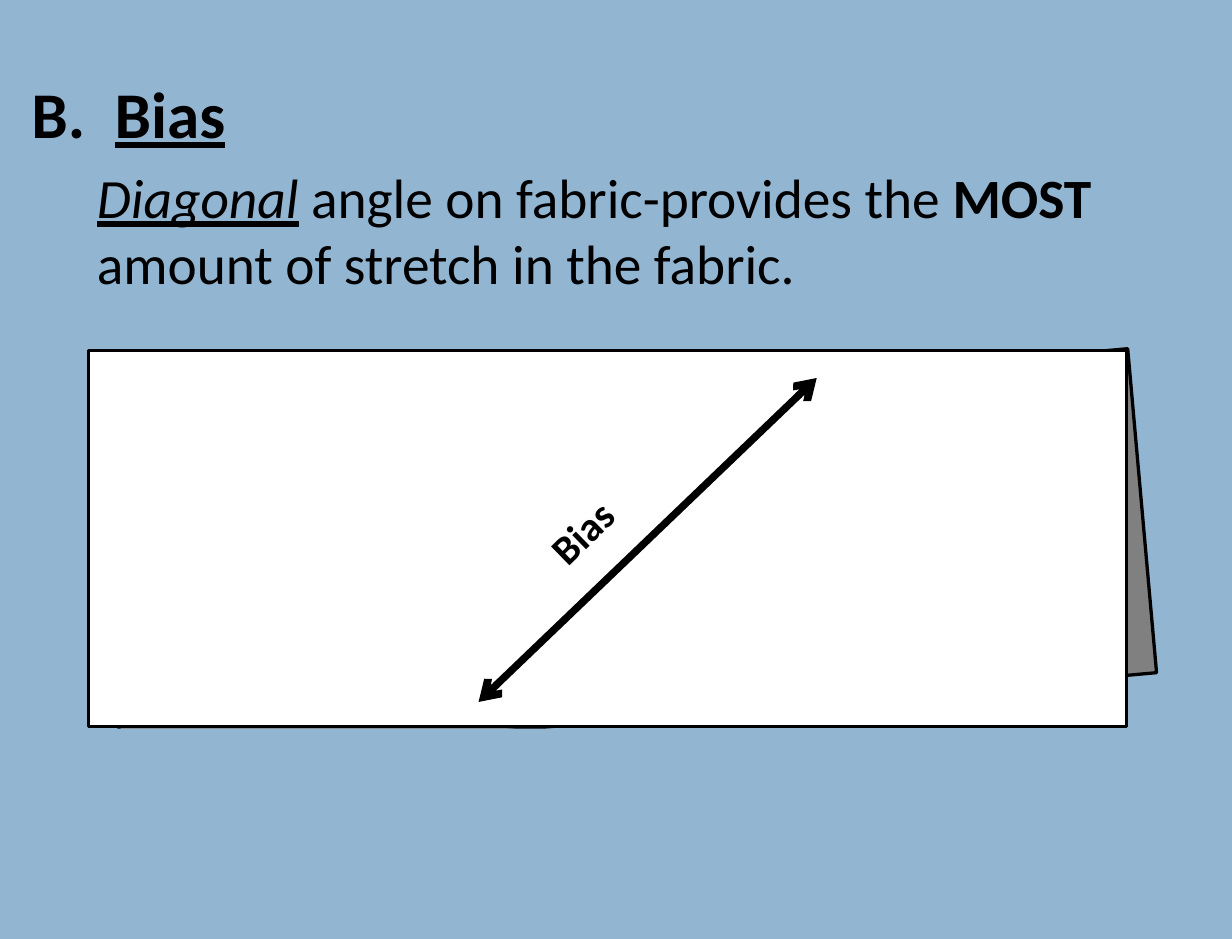
from dataclasses import dataclass

from lxml import etree
from pptx import Presentation
from pptx.dml.color import RGBColor
from pptx.enum.shapes import MSO_CONNECTOR, MSO_SHAPE
from pptx.oxml.ns import qn
from pptx.slide import Slide
from pptx.util import Cm, Pt

STRAIGHT = MSO_CONNECTOR.STRAIGHT
RECTANGLE = MSO_SHAPE.RECTANGLE
COLORS = {"background": "92B5D2", "ink": "000000", "front": "FFFFFF", "back": "808080"}
BOLD = {"bold": True}
PLAIN = {"bold": False}


def color(name):
    """Return the named color."""
    return RGBColor.from_string(COLORS[name])


@dataclass
class FabricSlide:
    """Draw styled elements on the current slide."""

    slide: Slide
    font: str = "Calibri"
    ink: str = "ink"

    def background(self, name):
        """Fill the slide background."""
        fill = self.slide.background.fill
        fill.solid()
        fill.fore_color.rgb = color(name)

    def rectangle(self, box, fill, outline=None, rotation=0):
        """Add a filled rectangle with an optional outline width."""
        shape = self.slide.shapes.add_shape(RECTANGLE, *map(Cm, box))
        shape.shadow.inherit = False
        shape.rotation = rotation
        shape.fill.solid()
        shape.fill.fore_color.rgb = color(fill)
        if outline:
            shape.line.color.rgb = color(self.ink)
            shape.line.width = Pt(outline)
        else:
            shape.line.fill.background()

    def double_arrow(self, start, end, width):
        """Add a straight line with an arrowhead at both ends."""
        connector = self.slide.shapes.add_connector(STRAIGHT, *map(Cm, start + end))
        connector.line.color.rgb = color(self.ink)
        connector.line.width = Pt(width)
        line = connector.line._get_or_add_ln()
        for tag in ("a:headEnd", "a:tailEnd"):
            etree.SubElement(line, qn(tag), type="arrow")
        etree.SubElement(connector._element.spPr, qn("a:effectLst"))

    def text(self, box, paragraphs, rotation=0, wrap=True):
        """Add a text box from paragraph formats and their runs."""
        shape = self.slide.shapes.add_textbox(*map(Cm, box))
        shape.rotation = rotation
        frame = shape.text_frame
        frame.word_wrap = wrap
        for index, (size, space, margin, indent, runs) in enumerate(paragraphs):
            paragraph = frame.add_paragraph() if index else frame.paragraphs[0]
            paragraph.space_before = Pt(space)
            properties = paragraph._p.get_or_add_pPr()
            properties.set("marL", str(Cm(margin)))
            properties.set("indent", str(Cm(indent)))
            for words, formats in runs:
                run = paragraph.add_run()
                run.text = words
                run.font.color.rgb = color(self.ink)
                values = {"name": self.font, "size": Pt(size), **formats}
                for attribute, value in values.items():
                    setattr(run.font, attribute, value)


def main():
    """Build and save the bias slide."""
    presentation = Presentation()
    presentation.slide_width = Cm(26.67)
    presentation.slide_height = Cm(20.32)
    layout = presentation.slide_layouts.get_by_name("Blank")
    page = FabricSlide(presentation.slides.add_slide(layout))
    page.background("background")

    heading = [("B.  ", BOLD), ("Bias", {"bold": True, "underline": True})]
    definition = [
        ("Diagonal", {"italic": True, "underline": True}),
        (" angle on fabric-provides the ", PLAIN),
        ("MOST", BOLD),
        (" amount of stretch in the fabric.", PLAIN),
    ]
    page.text(
        (0.43, 1.47, 25.83, 5.28),
        [(40, 0, 1.42, -1.42, heading), (34, 6.8, 1.42, 0, definition)],
    )

    page.rectangle((2.29, 8.53, 22.48, 7.04), "back", 2, -5.1)
    page.rectangle((1.91, 7.59, 22.48, 8.13), "front", 2)
    page.rectangle((2.49, 15.77, 9.93, 1.4), "background")
    page.double_arrow((10.36, 15.19), (17.68, 8.18), 4.5)
    page.text(
        (11.61, 10.46, 2.92, 1.75),
        [(25, 0, 0, 0, [("Bias", BOLD)])],
        rotation=-44.3,
    )
    presentation.save("out.pptx")


if __name__ == "__main__":
    main()
